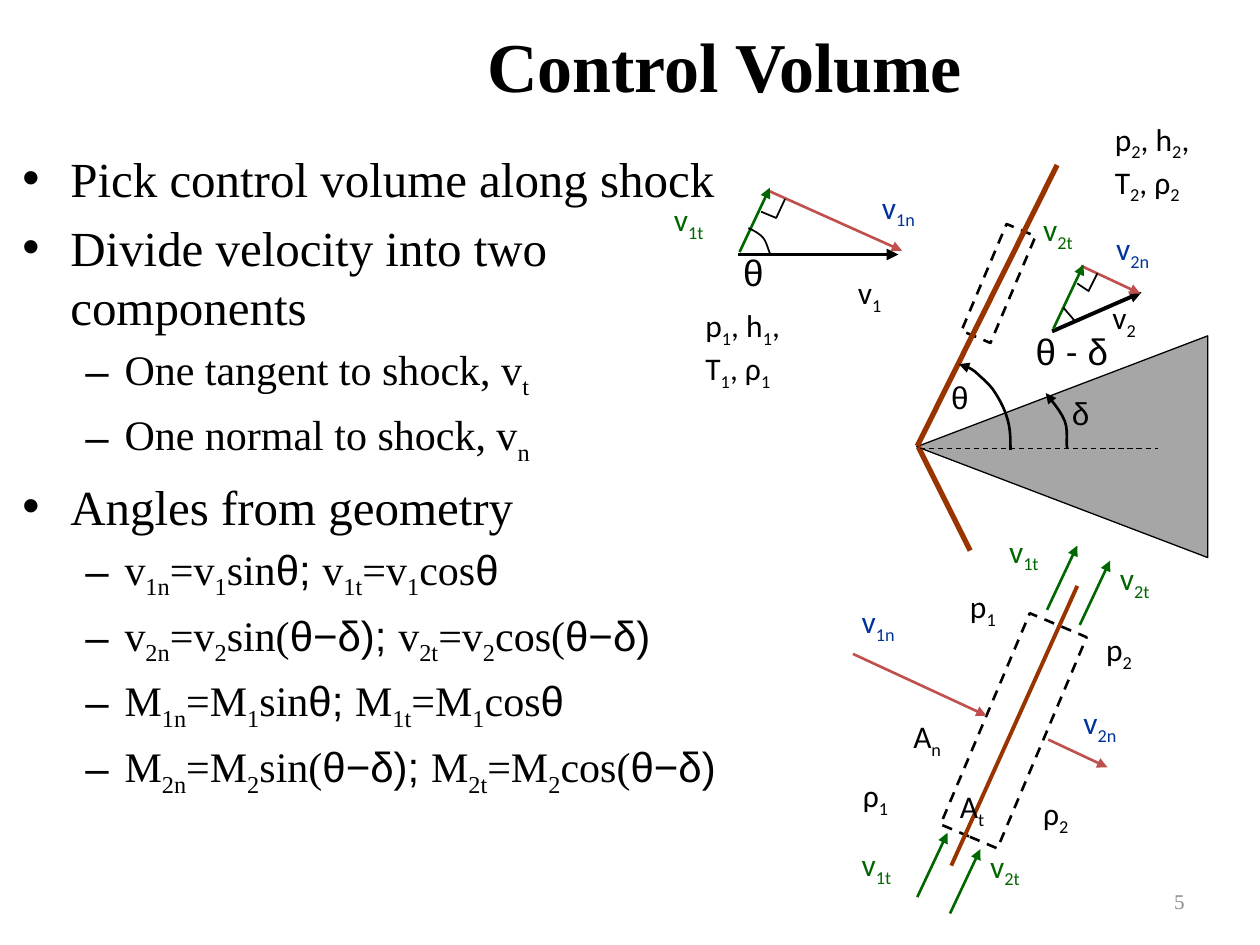
"""Build the oblique shock control volume slide."""
from dataclasses import dataclass
from typing import Any, Optional

from lxml import etree
from pptx import Presentation
from pptx.dml.color import RGBColor
from pptx.enum.dml import MSO_LINE
from pptx.enum.shapes import MSO_CONNECTOR, MSO_SHAPE
from pptx.enum.text import MSO_ANCHOR, MSO_AUTO_SIZE, PP_ALIGN
from pptx.oxml.ns import qn
from pptx.util import Inches, Pt

DASH = MSO_LINE.DASH
STRAIGHT = MSO_CONNECTOR.STRAIGHT
RECTANGLE, TRIANGLE = MSO_SHAPE.RECTANGLE, MSO_SHAPE.ISOSCELES_TRIANGLE
MIDDLE = MSO_ANCHOR.MIDDLE
CENTER, RIGHT, LEFT = PP_ALIGN.CENTER, PP_ALIGN.RIGHT, PP_ALIGN.LEFT
FIT_SHAPE, NO_FIT = MSO_AUTO_SIZE.SHAPE_TO_FIT_TEXT, MSO_AUTO_SIZE.NONE


@dataclass(frozen=True)
class Theme:
    """Colours, fonts and type sizes of the slide."""
    ink: str = "000000"
    wedge: str = "A6A6A6"
    shock: str = "993300"
    normal_arrow: str = "C0504D"
    normal: str = "003399"
    tangent: str = "006600"
    muted: str = "8C8C8C"
    serif: str = "Times New Roman"
    sans: str = "Calibri"
    greek: str = "Arial"
    title: int = 40
    levels: tuple = (28, 24)
    label: int = 18
    angle: int = 21
    number: int = 12


THEME = Theme()


@dataclass(frozen=True)
class Bullet:
    """One outline line; [x] is a subscript and {x} is in the Greek font."""
    text: str
    level: int = 1


@dataclass(frozen=True)
class Block:
    """A preset shape."""
    kind: Any
    left: float
    top: float
    width: float
    height: float
    rotation: float
    weight: float
    fill: Optional[str] = None


@dataclass(frozen=True)
class Segment:
    """A straight line or arrow."""
    start: tuple
    end: tuple
    color: str
    weight: float = 1.5
    arrow: bool = True
    dashed: bool = False


@dataclass(frozen=True)
class Outline:
    """An open outline, with cubic control points when it is curved."""
    points: tuple
    weight: float = 1
    curved: bool = True
    arrow: bool = False


@dataclass(frozen=True)
class Label:
    """A diagram label in the same markup as a bullet."""
    text: str
    left: float
    top: float
    width: float = 0.62
    height: float = 0.5
    color: str = THEME.ink
    size: int = THEME.label
    wrap: bool = True


BULLETS = (
    Bullet("Pick control volume along shock", 0),
    Bullet("Divide velocity into two components", 0),
    Bullet("One tangent to shock, v[t]"),
    Bullet("One normal to shock, v[n]"),
    Bullet("Angles from geometry", 0),
    *(Bullet(f"{name}[{side}n]={name}[{side}]sin{angle}{{; }}"
             f"{name}[{side}t]={name}[{side}]cos{angle}")
      for name in "vM" for side, angle in ((1, "{θ}"), (2, "({θ−δ)}"))),
)
BLOCKS = (
    Block(RECTANGLE, 7.8, 1.79, 0.25, 0.92, 22.9, 1.5),
    Block(TRIANGLE, 7.55, 2.39, 1.76, 2.31, 270, 0.75, THEME.wedge),
    Block(RECTANGLE, 7.8, 4.89, 0.49, 1.82, 22.9, 1.5),
)
NORMAL_ARROWS = (((6.09, 1.51), (7.16, 1.99)), ((8.58, 2.11), (9.05, 2.33)),
                 ((6.77, 5.19), (7.83, 5.68)), ((8.32, 5.87), (8.79, 6.09)))
TANGENT_STARTS = ((5.87, 2), (8.36, 2.61), (7.28, 7.12), (7.54, 7.25), (8.31, 4.84), (8.57, 4.96))
SEGMENTS = (
    Segment((5.86, 2.02), (7.13, 2.02), THEME.ink, 2.25),
    Segment((7.28, 3.54), (8.39, 1.31), THEME.shock, 3, False),
    Segment((7.29, 3.55), (7.7, 4.37), THEME.shock, 3, False),
    Segment((7.3, 3.56), (9.19, 3.56), THEME.ink, 0.75, False, True),
    Segment((8.35, 2.63), (9.06, 2.32), THEME.ink, 2.25),
    Segment((7.55, 6.87), (8.55, 4.65), THEME.shock, 2.25, False),
    *(Segment(start, end, THEME.normal_arrow) for start, end in NORMAL_ARROWS),
    *(Segment((x, y), (x + 0.24, y - 0.51), THEME.tangent) for x, y in TANGENT_STARTS),
)
OUTLINES = (
    Outline(((8.02, 3.57), (8.02, 3.49), (8.02, 3.41), (8, 3.34), (7.98, 3.26), (7.94, 3.18),
             (7.9, 3.12), (7.86, 3.05), (7.78, 2.99), (7.74, 2.95), (7.69, 2.91), (7.64, 2.9),
             (7.61, 2.89)), 1.5, arrow=True),
    Outline(((8.47, 3.56), (8.46, 3.52), (8.48, 3.41), (8.45, 3.34), (8.42, 3.26), (8.33, 3.16),
             (8.3, 3.12)), 1.5, arrow=True),
    Outline(((6.23, 1.58), (6.16, 1.73), (6.04, 1.68)), curved=False),
    Outline(((8.71, 2.17), (8.64, 2.31), (8.55, 2.25)), curved=False),
    Outline(((6.11, 2.01), (6.09, 1.96), (6.08, 1.91), (6.05, 1.88), (6.02, 1.85), (5.98, 1.83),
             (5.94, 1.81))),
    Outline(((8.53, 2.55), (8.52, 2.53), (8.46, 2.47), (8.44, 2.44))),
)
NORMAL_LABELS = ((1, 6.9, 1.44), (2, 8.76, 1.77), (1, 6.74, 4.73), (2, 8.5, 5.53))
TANGENT_LABELS = ((1, 5.25, 1.54), (2, 8.18, 1.62), (1, 6.74, 6.66), (2, 7.76, 6.67),
                  (1, 7.91, 4.17), (2, 8.79, 4.39))
FACE_LABELS = (("A[n]", 7.15, 5.64), ("A[t]", 7.52, 6.2), ("p[1]", 7.6, 4.61),
               ("p[2]", 8.68, 4.95), ("ρ[1]", 6.75, 6.11), ("ρ[2]", 8.18, 6.25))
LABELS = (
    Label("p[1], h[1],|\n|T[1], ρ[1]", 5.5, 2.38, 1.18, 0.9),
    Label("p[2], h[2],|\n|T[2], ρ[2]", 8.75, 0.9, 1.14, 0.9),
    Label("v[1]", 6.71, 2.12, 0.56),
    Label("v[2]", 8.73, 2.32, 0.56),
    Label("{θ}", 7.45, 2.95, 0.53, 0.4),
    Label("{δ}", 8.41, 3.08, 0.53, 0.4),
    Label("{θ}", 5.8, 1.93, 0.53, 0.45, size=THEME.angle),
    Label("{θ }-{ δ}", 8.12, 2.56, 0.79, 0.45, size=THEME.angle),
    *(Label(f"v[{side}n]", x, y, color=THEME.normal) for side, x, y in NORMAL_LABELS),
    *(Label(f"v[{side}t]", x, y, color=THEME.tangent) for side, x, y in TANGENT_LABELS),
    *(Label(text, x, y, 0.5, wrap=False) for text, x, y in FACE_LABELS),
)


def apply_format(target: Any, values: dict) -> None:
    """Set every named attribute on the target."""
    for name, value in values.items():
        setattr(target, name, value)


def write_markup(para: Any, text: str, font: str, size: int, color: str, bold: bool = False) -> None:
    """Write marked-up text as formatted spans."""
    for mark, code in (("[", "|_"), ("{", "|^"), ("]", "|"), ("}", "|")):
        text = text.replace(mark, code)
    for piece in filter(None, text.split("|")):
        if piece == "\n":
            para.add_line_break()
            continue
        span = para.add_run()
        span.text = piece.lstrip("_^")
        name = THEME.greek if piece[0] == "^" else font
        apply_format(span.font, {"name": name, "size": Pt(size), "bold": bold})
        span.font.color.rgb = RGBColor.from_string(color)
        if piece[0] == "_":
            span._r.get_or_add_rPr().set("baseline", "-25000")


def style_line(line: Any, color: str, weight: float, arrow: bool = False, dashed: bool = False) -> None:
    """Give a line its colour, width, dash and arrowhead."""
    line.color.rgb = RGBColor.from_string(color)
    line.width = Pt(weight)
    if dashed:
        line.dash_style = DASH
    if arrow:
        etree.SubElement(line._get_or_add_ln(), qn("a:tailEnd"), type="triangle")


def draw_block(page: Any, block: Block) -> None:
    """Draw the wedge or a dashed control volume."""
    shape = page.shapes.add_shape(block.kind, *map(Inches, (block.left, block.top, block.width, block.height)))
    shape.rotation = block.rotation
    shape.shadow.inherit = False
    if block.fill:
        shape.fill.solid()
        shape.fill.fore_color.rgb = RGBColor.from_string(block.fill)
    else:
        shape.fill.background()
    style_line(shape.line, THEME.ink, block.weight, dashed=block.fill is None)


def draw_segment(page: Any, segment: Segment) -> None:
    """Draw a straight connector."""
    connector = page.shapes.add_connector(STRAIGHT, *map(Inches, segment.start + segment.end))
    style_line(connector.line, segment.color, segment.weight, segment.arrow, segment.dashed)
    etree.SubElement(connector._element.spPr, qn("a:effectLst"))


def sample_curve(points: tuple, steps: int = 6) -> list:
    """Return points along a chain of cubic curves."""
    result = [points[0]]
    for first in range(0, len(points) - 1, 3):
        a, b, c, d = points[first:first + 4]
        for t in (step / steps for step in range(1, steps + 1)):
            weights = ((1 - t) ** 3, 3 * t * (1 - t) ** 2, 3 * t * t * (1 - t), t ** 3)
            result.append(tuple(sum(w * p[axis] for w, p in zip(weights, (a, b, c, d))) for axis in (0, 1)))
    return result


def draw_outline(page: Any, outline: Outline) -> None:
    """Draw an angle arc or a right-angle mark."""
    points = sample_curve(outline.points) if outline.curved else outline.points
    start, *rest = [(Inches(x), Inches(y)) for x, y in points]
    builder = page.shapes.build_freeform(*start)
    builder.add_line_segments(rest, close=False)
    shape = builder.convert_to_shape()
    shape.shadow.inherit = False
    shape.fill.background()
    style_line(shape.line, THEME.ink, outline.weight, outline.arrow)


def draw_label(page: Any, label: Label) -> None:
    """Draw a diagram label."""
    box = page.shapes.add_textbox(*map(Inches, (label.left, label.top, label.width, label.height)))
    apply_format(box.text_frame, {"word_wrap": label.wrap, "auto_size": FIT_SHAPE})
    write_markup(box.text_frame.paragraphs[0], label.text, THEME.sans, label.size, label.color)


def draw_title(page: Any) -> None:
    """Place and fill the title."""
    title = page.shapes.title
    apply_format(title, {"left": Inches(2), "top": Inches(0.15), "width": Inches(7.5), "height": Inches(0.73)})
    apply_format(title.text_frame, {"vertical_anchor": MIDDLE, "auto_size": NO_FIT, "word_wrap": True})
    para = title.text_frame.paragraphs[0]
    para.alignment = CENTER
    write_markup(para, "Control Volume", THEME.serif, THEME.title, THEME.ink, True)


def draw_bullets(page: Any) -> None:
    """Draw the two-level outline."""
    frame = page.shapes.add_textbox(*map(Inches, (0.08, 1.13, 5.79, 5.83))).text_frame
    frame.word_wrap = True
    for index, bullet in enumerate(BULLETS):
        para = frame.add_paragraph() if index else frame.paragraphs[0]
        size = THEME.levels[bullet.level]
        margin, hanging, sign = ((0.38, 0.38, "•"), (0.81, 0.31, "–"))[bullet.level]
        apply_format(para, {"level": bullet.level, "alignment": LEFT})
        if index:
            para.space_before = Pt(size * 0.2)
        properties = para._p.get_or_add_pPr()
        properties.set("marL", str(Inches(margin)))
        properties.set("indent", str(-Inches(hanging)))
        etree.SubElement(properties, qn("a:buFont"), typeface=THEME.greek)
        etree.SubElement(properties, qn("a:buChar"), char=sign)
        write_markup(para, bullet.text, THEME.serif, size, THEME.ink)


def draw_number(page: Any) -> None:
    """Draw the page number."""
    frame = page.shapes.add_textbox(*map(Inches, (7.17, 6.95, 2.33, 0.4))).text_frame
    apply_format(frame, {"word_wrap": True, "vertical_anchor": MIDDLE})
    frame.paragraphs[0].alignment = RIGHT
    write_markup(frame.paragraphs[0], "5", THEME.serif, THEME.number, THEME.muted)


def main() -> None:
    """Build and save the deck."""
    deck = Presentation()
    apply_format(deck, {"slide_width": Inches(10), "slide_height": Inches(7.5)})
    page = deck.slides.add_slide(deck.slide_layouts[5])
    for draw in (draw_title, draw_bullets, draw_number):
        draw(page)
    for draw, items in ((draw_block, BLOCKS), (draw_segment, SEGMENTS),
                        (draw_outline, OUTLINES), (draw_label, LABELS)):
        for item in items:
            draw(page, item)
    deck.save("out.pptx")


if __name__ == "__main__":
    main()
